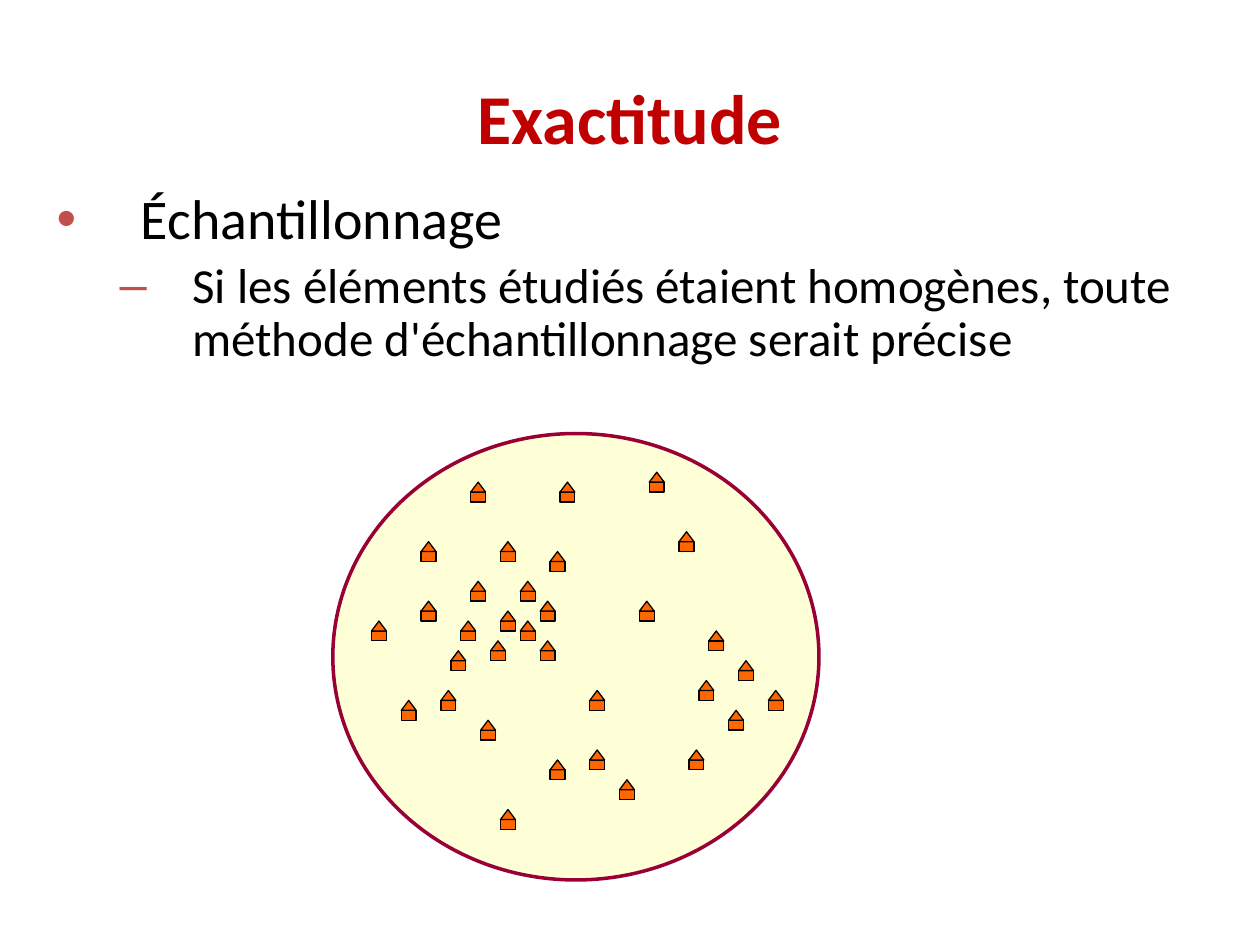
from lxml import etree
from pptx import Presentation
from pptx.dml.color import RGBColor
from pptx.enum.shapes import MSO_SHAPE
from pptx.enum.text import MSO_ANCHOR, MSO_AUTO_SIZE, PP_ALIGN
from pptx.oxml.ns import qn
from pptx.util import Emu, Pt

ELLIPSE, RECTANGLE, TRIANGLE = MSO_SHAPE.OVAL, MSO_SHAPE.RECTANGLE, MSO_SHAPE.ISOSCELES_TRIANGLE
MIDDLE, CENTER = MSO_ANCHOR.MIDDLE, PP_ALIGN.CENTER
FIT_SHAPE = MSO_AUTO_SIZE.SHAPE_TO_FIT_TEXT

RED = RGBColor(0xC0, 0x00, 0x00)
BRICK = RGBColor(0xC0, 0x50, 0x4D)
BLACK = RGBColor(0x00, 0x00, 0x00)
CREAM = RGBColor(0xFF, 0xFF, 0xD7)
BURGUNDY = RGBColor(0x99, 0x00, 0x33)
ORANGE = RGBColor(0xFF, 0x66, 0x00)

PX = 3600  # EMU in one px, 254 px to the inch
SLIDE_SIZE = 2540, 1905
GRID_LEFT, GRID_TOP, GRID_STEP = 749, 952, 20
HOUSE_WIDTH, STOREY = 30, 20

# text, level, size, bullet, margin, hanging indent
POINTS = [
    ("Échantillonnage", 0, 32, "•", 170, 170),
    ("Si les éléments étudiés étaient homogènes, toute méthode "
     "d'échantillonnage serait précise", 1, 28, "–", 274, 147),
]

# column and row of each house on the grid
HOUSES = [
    (27, 13), (19, 1), (0, 15), (10, 11), (13, 14), (8, 18), (17, 17),
    (3, 23), (13, 34), (32, 28), (10, 1), (13, 7), (15, 11), (22, 22),
    (18, 8), (33, 21), (36, 24), (28, 0), (17, 13), (31, 6), (15, 15),
    (34, 16), (37, 19), (40, 22), (9, 15), (5, 13), (5, 7), (11, 25),
    (7, 22), (18, 29), (12, 17), (22, 28), (25, 31),
]


def px(*lengths):
    return [Emu(length * PX) for length in lengths]


def apply(target, values):
    for name, value in values.items():
        setattr(target, name, value)


class SlideBuilder:
    font_name = "Calibri"

    def __init__(self, slide):
        self.slide = slide

    def style_font(self, font, size, color, bold=False):
        apply(font, {"name": self.font_name, "size": Pt(size), "bold": bold})
        font.color.rgb = color

    def title(self, text, box):
        title = self.slide.shapes.title
        apply(title, dict(zip(("left", "top", "width", "height"), px(*box))))
        frame = title.text_frame
        apply(frame, {"text": text, "word_wrap": True,
                      "vertical_anchor": MIDDLE, "auto_size": FIT_SHAPE})
        paragraph = frame.paragraphs[0]
        paragraph.alignment = CENTER
        self.style_font(paragraph.runs[0].font, 40, RED, bold=True)

    def bullets(self, points, box):
        frame = self.slide.shapes.add_textbox(*px(*box)).text_frame
        frame.word_wrap = True
        for index, (text, level, size, mark, margin, hanging) in enumerate(points):
            paragraph = frame.add_paragraph() if index else frame.paragraphs[0]
            apply(paragraph, {"text": text, "level": level,
                              "line_spacing": 0.9, "space_before": Pt(size * 0.2)})
            self.style_font(paragraph.runs[0].font, size, BLACK)
            self.bullet(paragraph, mark, margin, hanging)

    def bullet(self, paragraph, mark, margin, hanging):
        properties = paragraph._p.get_or_add_pPr()
        properties.set("marL", str(margin * PX))
        properties.set("indent", str(-hanging * PX))
        color = etree.SubElement(properties, qn("a:buClr"))
        etree.SubElement(color, qn("a:srgbClr"), val=str(BRICK))
        etree.SubElement(properties, qn("a:buFont"), typeface="Arial")
        etree.SubElement(properties, qn("a:buChar"), char=mark)

    def shape(self, kind, box, fill, line, line_width, parent=None):
        shape = (parent or self.slide).shapes.add_shape(kind, *px(*box))
        shape.shadow.inherit = False
        shape.fill.solid()
        shape.fill.fore_color.rgb = fill
        shape.line.color.rgb = line
        shape.line.width = Pt(line_width)

    def house(self, column, row):
        left = GRID_LEFT + column * GRID_STEP
        top = GRID_TOP + row * GRID_STEP
        group = self.slide.shapes.add_group_shape()
        for kind, part_top in ((RECTANGLE, top + STOREY), (TRIANGLE, top)):
            self.shape(kind, (left, part_top, HOUSE_WIDTH, STOREY),
                       ORANGE, BLACK, 0.75, group)


def main():
    presentation = Presentation()
    apply(presentation, dict(zip(("slide_width", "slide_height"), px(*SLIDE_SIZE))))
    title_only = presentation.slide_layouts[5]
    builder = SlideBuilder(presentation.slides.add_slide(title_only))
    builder.title("Exactitude", (127, 137, 2286, 196))
    builder.bullets(POINTS, (89, 373, 2451, 419))
    builder.shape(ELLIPSE, (671, 874, 980, 900), CREAM, BURGUNDY, 2)
    for column, row in HOUSES:
        builder.house(column, row)
    presentation.save("out.pptx")


if __name__ == "__main__":
    main()
